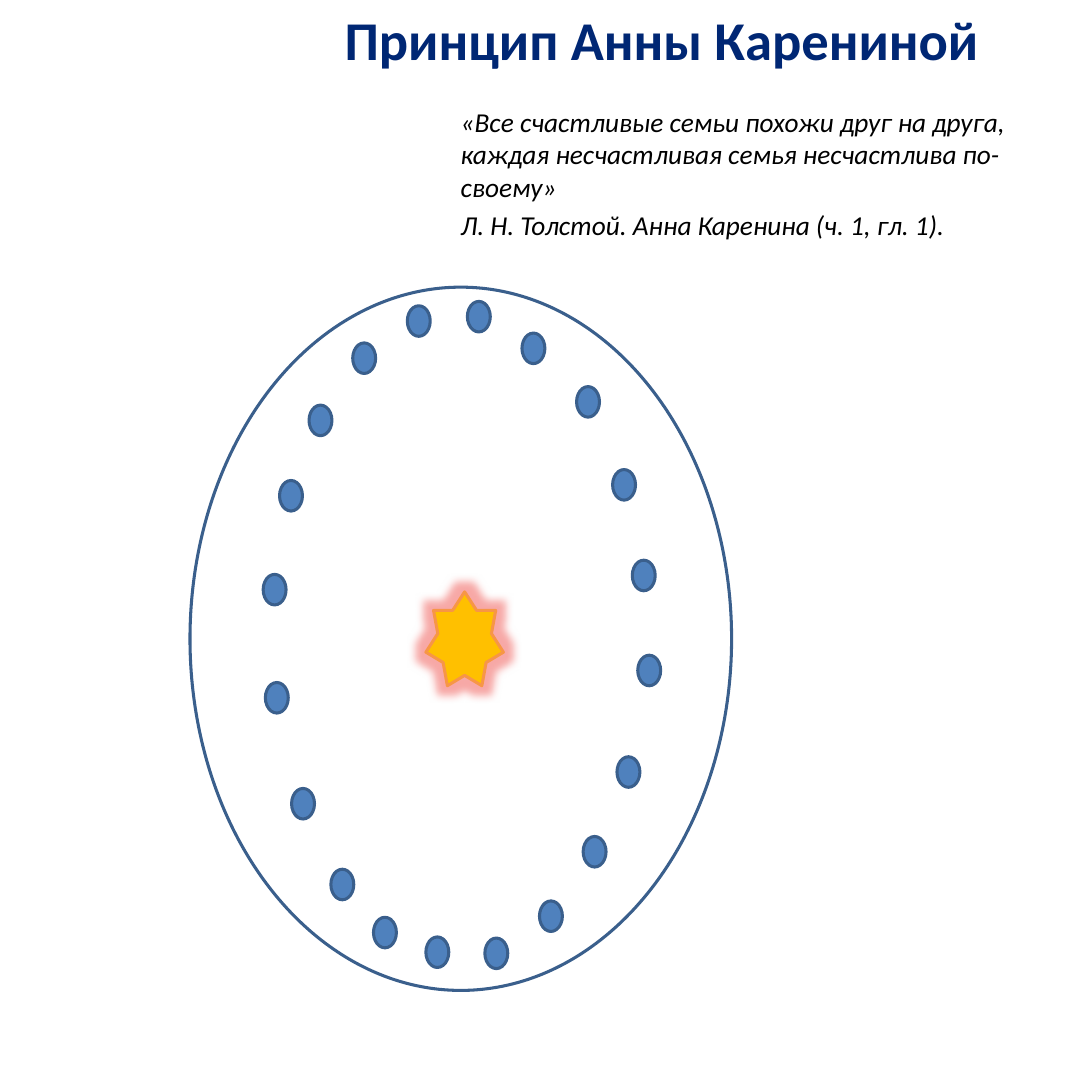
from dataclasses import dataclass
from typing import NamedTuple, Optional

from lxml.etree import SubElement
from pptx import Presentation
from pptx.dml.color import RGBColor
from pptx.enum.shapes import MSO_SHAPE as Preset
from pptx.enum.text import MSO_ANCHOR as Anchor, PP_ALIGN as Align
from pptx.oxml.ns import qn
from pptx.util import Inches, Pt


@dataclass(frozen=True)
class Theme:
    font: str = "Calibri"
    title_size: int = 36
    quote_size: int = 18
    line_width: int = 2
    title: str = "002774"
    quote: str = "000000"
    dot: str = "4F81BD"
    outline: str = "3A5F8C"
    star: str = "FFC000"
    star_outline: str = "F79646"
    glow: str = "EB2722"


class Box(NamedTuple):
    left: float
    top: float
    width: float
    height: float

    def lengths(self) -> list:
        return [Inches(value) for value in self]


@dataclass(frozen=True)
class Figure:
    preset: Preset
    box: Box
    line: str
    fill: Optional[str] = None


@dataclass(frozen=True)
class Caption:
    box: Box
    lines: tuple
    size: int
    color: str
    bold: bool = False
    italic: bool = False
    align: Align = Align.LEFT
    anchor: Anchor = Anchor.TOP


THEME = Theme()
DOT_WIDTH, DOT_HEIGHT = 0.21, 0.28
DOT_CORNERS = (
    (4.28, 2.76), (4.78, 3.05), (5.28, 3.54), (5.61, 4.3), (5.79, 5.13),
    (5.84, 6), (5.65, 6.93), (5.34, 7.66), (4.94, 8.25), (4.44, 8.59),
    (3.9, 8.58), (3.42, 8.4), (3.03, 7.96), (2.67, 7.22), (2.43, 6.25),
    (2.41, 5.26), (2.56, 4.4), (2.83, 3.71), (3.23, 3.14), (3.73, 2.8),
)
CAPTIONS = (
    Caption(Box(1.69, -0.2, 8.74, 1.11), ("Принцип Анны Карениной",),
            THEME.title_size, THEME.title, bold=True,
            align=Align.CENTER, anchor=Anchor.MIDDLE),
    Caption(Box(4.12, 0.91, 5.69, 1.98),
            ("«Все счастливые семьи похожи друг на друга, "
             "каждая несчастливая семья несчастлива по-своему»",
             "Л. Н. Толстой. Анна Каренина (ч. 1, гл. 1)."),
            THEME.quote_size, THEME.quote, italic=True),
)
STAR = Figure(Preset.STAR_7_POINT, Box(3.9, 5.42, 0.71, 0.86), THEME.star_outline, THEME.star)
ORBIT = Figure(Preset.OVAL, Box(1.74, 2.63, 4.96, 6.44), THEME.outline)
DOTS = [Figure(Preset.OVAL, Box(left, top, DOT_WIDTH, DOT_HEIGHT), THEME.outline, THEME.dot)
        for left, top in DOT_CORNERS]


def add_caption(slide, caption: Caption) -> None:
    text_frame = slide.shapes.add_textbox(*caption.box.lengths()).text_frame
    text_frame.word_wrap = True
    text_frame.vertical_anchor = caption.anchor
    text_frame.text = "\n".join(caption.lines)
    for index, paragraph in enumerate(text_frame.paragraphs):
        paragraph.alignment = caption.align
        paragraph.space_before = Pt(0.2 * caption.size if index else 0)
        for run in paragraph.runs:
            font = run.font
            font.name = THEME.font
            font.size = Pt(caption.size)
            font.bold = caption.bold
            font.italic = caption.italic
            font.color.rgb = RGBColor.from_string(caption.color)


def add_figure(slide, figure: Figure):
    shape = slide.shapes.add_shape(figure.preset, *figure.box.lengths())
    shape.shadow.inherit = False
    if figure.fill:
        shape.fill.solid()
        shape.fill.fore_color.rgb = RGBColor.from_string(figure.fill)
    else:
        shape.fill.background()
    shape.line.color.rgb = RGBColor.from_string(figure.line)
    shape.line.width = Pt(THEME.line_width)
    return shape


def add_glow(shape, color: str, radius: int, opacity: int) -> None:
    effects = shape.element.spPr.find(qn("a:effectLst"))
    glow = SubElement(effects, qn("a:glow"), rad=str(radius))
    glow_color = SubElement(glow, qn("a:srgbClr"), val=color)
    SubElement(glow_color, qn("a:alpha"), val=str(opacity * 1000))


def main() -> None:
    presentation = Presentation()
    presentation.slide_width = presentation.slide_height = Inches(10)
    slide = presentation.slides.add_slide(presentation.slide_layouts[6])
    for caption in CAPTIONS:
        add_caption(slide, caption)
    add_glow(add_figure(slide, STAR), THEME.glow, Pt(11), 40)
    for figure in (ORBIT, *DOTS):
        add_figure(slide, figure)
    presentation.save("out.pptx")


if __name__ == "__main__":
    main()
